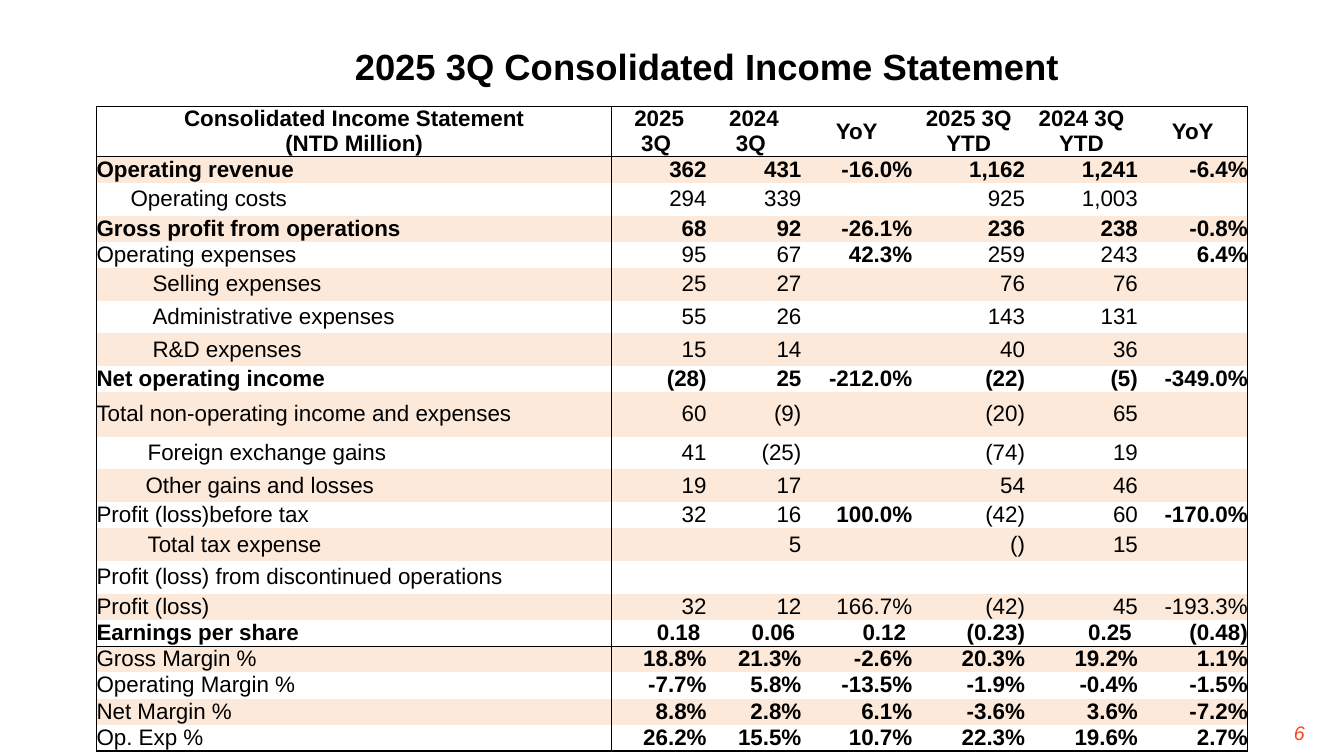
from lxml.etree import SubElement
from pptx import Presentation
from pptx.dml.color import RGBColor
from pptx.enum.text import MSO_ANCHOR, PP_ALIGN
from pptx.oxml.ns import qn
from pptx.util import Pt

BLACK = RGBColor(0x00, 0x00, 0x00)
WHITE = RGBColor(0xFF, 0xFF, 0xFF)
PEACH = RGBColor(0xFD, 0xE9, 0xD9)
RED = RGBColor(0xFA, 0x46, 0x1E)
FONT = "Arial"
PLAIN_TABLE_STYLE = "{2D5ABB26-0587-4C30-8999-92F81FD0307C}"

TITLE = "2025 3Q Consolidated Income Statement"
PAGE_NUMBER = "6"
HEADER = ["Consolidated Income Statement\v(NTD Million)", "2025\v3Q ", "2024\v3Q ", "YoY",
          "2025 3Q\vYTD", "2024 3Q\vYTD", "YoY"]
NON_OPERATING = "Total non-operating income and expenses"
EARNINGS = "Earnings per share"
ROWS = [
    ("total", 0, "Operating revenue", "362", "431", "-16.0%", "1,162", "1,241", "-6.4%"),
    ("plain", 24.3, "Operating costs", "294", "339", "", "925", "1,003", ""),
    ("total", 0, "Gross profit from operations", "68", "92", "-26.1%", "236", "238", "-0.8%"),
    ("change", 0, "Operating expenses", "95", "67", "42.3%", "259", "243", "6.4%"),
    ("plain", 40, "Selling expenses", "25", "27", "", "76", "76", ""),
    ("plain", 40, "Administrative expenses", "55", "26", "", "143", "131", ""),
    ("plain", 40, "R&D expenses", "15", "14", "", "40", "36", ""),
    ("total", 0, "Net operating income", "(28)", "25", "-212.0%", "(22)", "(5)", "-349.0%"),
    ("plain", 0, NON_OPERATING, "60", "(9)", "", "(20)", "65", ""),
    ("plain", 36.5, "Foreign exchange gains", "41", "(25)", "", "(74)", "19", ""),
    ("plain", 35, "Other gains and losses", "19", "17", "", "54", "46", ""),
    ("change", 0, "Profit (loss)before tax", "32", "16", "100.0%", "(42)", "60", "-170.0%"),
    ("plain", 36.5, "Total tax expense", "", "5", "", "()", "15", ""),
    ("plain", 0, "Profit (loss) from discontinued operations", "", "", "", "", "", ""),
    ("plain", 0, "Profit (loss)", "32", "12", "166.7%", "(42)", "45", "-193.3%"),
    ("total", 0, EARNINGS, "0.18 ", "0.06 ", "0.12 ", "(0.23)", "0.25 ", "(0.48)"),
    ("ratio", 0, "Gross Margin %", "18.8%", "21.3%", "-2.6%", "20.3%", "19.2%", "1.1%"),
    ("ratio", 0, "Operating Margin %", "-7.7%", "5.8%", "-13.5%", "-1.9%", "-0.4%", "-1.5%"),
    ("ratio", 0, "Net Margin %", "8.8%", "2.8%", "6.1%", "-3.6%", "3.6%", "-7.2%"),
    ("ratio", 0, "Op. Exp %", "26.2%", "15.5%", "10.7%", "22.3%", "19.6%", "2.7%"),
]
CHANGE_COLUMNS = {3, 6}
BOLD_COLUMNS = {
    "total": set(range(7)),
    "ratio": set(range(1, 7)),
    "change": CHANGE_COLUMNS,
    "plain": set(),
}
COLUMN_WIDTHS = [368, 67.7, 67.7, 79.2, 80.6, 80.6, 78.5]
HEADER_HEIGHT, ROW_HEIGHT, OPEN_ROW_HEIGHT, NON_OPERATING_HEIGHT = 35.7, 18.72, 23.4, 31.7
LINE_SPACING = 17.3


def row_height(label, values):
    if label == NON_OPERATING:
        return NON_OPERATING_HEIGHT
    return OPEN_ROW_HEIGHT if "" in values else ROW_HEIGHT


def write(text_frame, text, size, alignment, color=BLACK, bold=False, italic=False):
    paragraph = text_frame.paragraphs[0]
    paragraph.alignment = alignment
    for index, line in enumerate(text.split("\v")):
        if index:
            paragraph.add_line_break()
        run = paragraph.add_run()
        run.text = line
        run.font.name = FONT
        run.font.size = Pt(size)
        run.font.bold = bold
        run.font.italic = italic
        run.font.color.rgb = color


def add_borders(cell, sides):
    properties = cell._tc.get_or_add_tcPr()
    for side in "LRTB":
        if side in sides:
            line = SubElement(properties, qn(f"a:ln{side}"), w=str(Pt(1)))
            fill = SubElement(line, qn("a:solidFill"))
            SubElement(fill, qn("a:srgbClr"), val=str(BLACK))
        else:
            line = SubElement(properties, qn(f"a:ln{side}"), w="0")
            SubElement(line, qn("a:noFill"))


def border_sides(row, column):
    sides = ""
    if column in (0, 1):
        sides += "L"
    if column in (0, len(HEADER) - 1):
        sides += "R"
    if row in (0, 1, earnings_row + 1):
        sides += "T"
    if row in (0, earnings_row, len(ROWS)):
        sides += "B"
    return sides


def fill_cell(row, column, text, alignment, bold, indent=0):
    cell = table.cell(row, column)
    cell.margin_left = Pt(indent)
    cell.margin_right = cell.margin_top = cell.margin_bottom = Pt(0)
    cell.vertical_anchor = MSO_ANCHOR.MIDDLE
    add_borders(cell, border_sides(row, column))
    if row % 2:
        cell.fill.solid()
        cell.fill.fore_color.rgb = PEACH
    else:
        cell.fill.background()
    paragraph = cell.text_frame.paragraphs[0]
    paragraph.line_spacing = Pt(LINE_SPACING)
    paragraph.font.size = Pt(16)
    if text:
        write(cell.text_frame, text, 16, alignment, bold=bold)


presentation = Presentation()
presentation.slide_width = Pt(960)
presentation.slide_height = Pt(540)
slide = presentation.slides.add_slide(presentation.slide_layouts[5])

title = slide.shapes.title
title.left, title.top, title.width, title.height = Pt(243.4), Pt(26), Pt(536.4), Pt(41.8)
title.fill.solid()
title.fill.fore_color.rgb = WHITE
title.text_frame.margin_left = Pt(10)
title.text_frame.vertical_anchor = MSO_ANCHOR.MIDDLE
write(title.text_frame, TITLE, 26, PP_ALIGN.LEFT, bold=True)

page_number = slide.shapes.add_textbox(Pt(885), Pt(511.2), Pt(54), Pt(28.8))
page_number.text_frame.word_wrap = True
write(page_number.text_frame, PAGE_NUMBER, 14, PP_ALIGN.RIGHT, RED, italic=True)

heights = [HEADER_HEIGHT] + [row_height(label, values) for _, _, label, *values in ROWS]
earnings_row = 1 + [row[2] for row in ROWS].index(EARNINGS)
table = slide.shapes.add_table(len(heights), len(HEADER), Pt(69), Pt(76.2),
                               Pt(sum(COLUMN_WIDTHS)), Pt(sum(heights))).table
table.first_row = table.horz_banding = False
table._tbl.tblPr.find(qn("a:tableStyleId")).text = PLAIN_TABLE_STYLE
for column, width in zip(table.columns, COLUMN_WIDTHS):
    column.width = Pt(width)
for row, height in zip(table.rows, heights):
    row.height = Pt(height)

for column, text in enumerate(HEADER):
    fill_cell(0, column, text, PP_ALIGN.CENTER, True)
for row, (kind, indent, *texts) in enumerate(ROWS, start=1):
    for column, text in enumerate(texts):
        alignment = PP_ALIGN.RIGHT if column else PP_ALIGN.LEFT
        fill_cell(row, column, text, alignment, column in BOLD_COLUMNS[kind],
                  0 if column else indent)

presentation.save("out.pptx")
